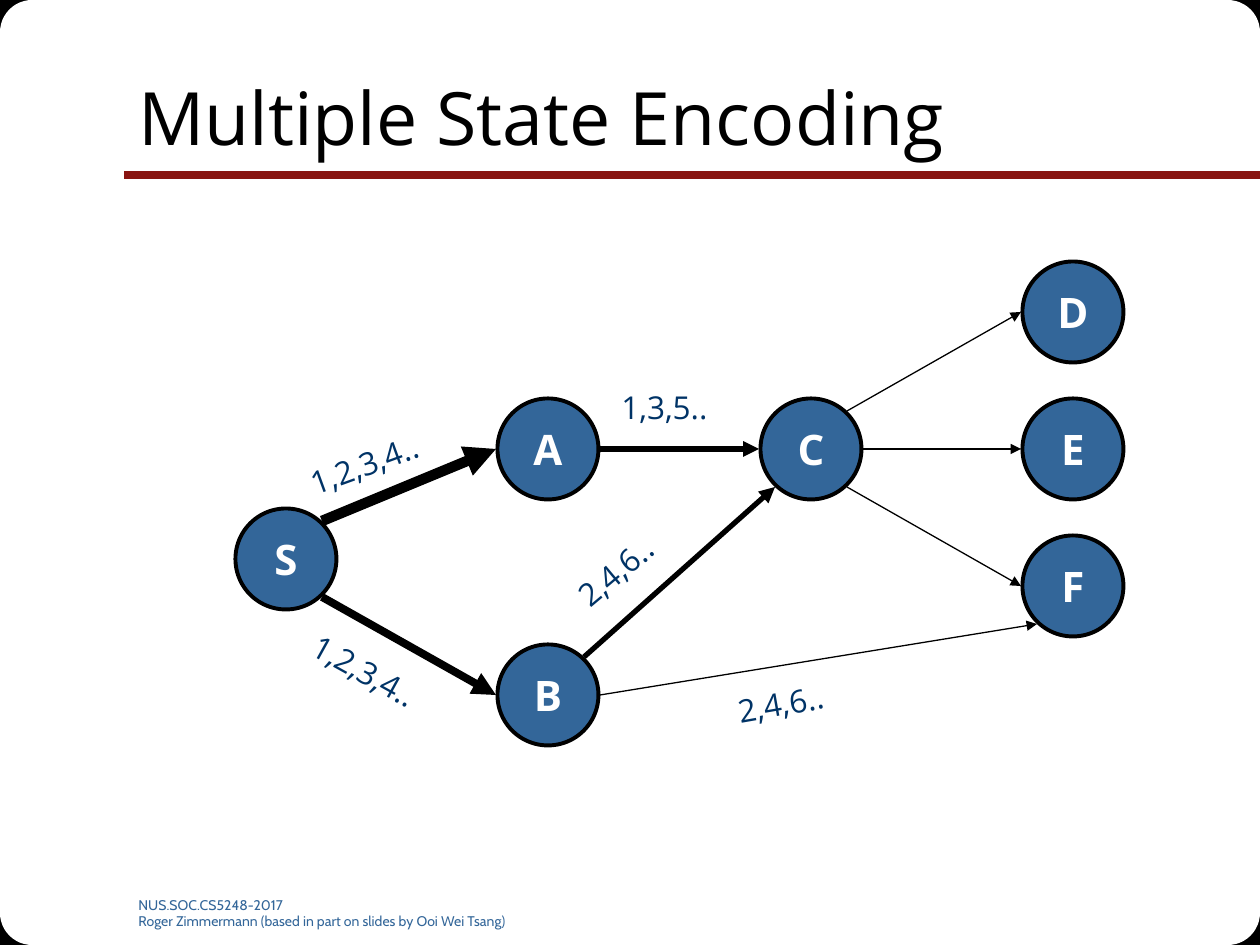
from itertools import product
from typing import NamedTuple

from lxml.etree import SubElement
from pptx import Presentation
from pptx.dml.color import RGBColor
from pptx.enum.shapes import MSO_CONNECTOR as Connector, MSO_SHAPE as Preset
from pptx.enum.text import MSO_ANCHOR as Anchor, PP_ALIGN as Align
from pptx.oxml.ns import qn
from pptx.util import Pt

EMU_PER_PX = 914400 / 126
WIDTH, HEIGHT = 1260, 945
NODE_SIZE = 101
COLORS = {
    "black": "000000",
    "white": "FFFFFF",
    "rule": "891411",
    "blue": "336699",
    "label": "003366",
}
PORTS = {
    "left": (-52, 0),
    "right": (52, 0),
    "upper_right": (36, -38),
    "lower_right": (36, 38),
    "lower_left": (-36, 38),
}


class Node(NamedTuple):
    name: str
    x: int
    y: int


class Edge(NamedTuple):
    source: str
    source_port: str
    target: str
    target_port: str
    weight: float


class Label(NamedTuple):
    text: str
    left: int
    top: int
    width: int
    height: int
    rotation: int = 0
    size: int = 18
    color: str = "label"
    font: str = "Open Sans"


NODES = [
    Node("S", 286, 559),
    Node("C", 811, 449),
    Node("B", 548, 695),
    Node("A", 548, 449),
    Node("D", 1073, 312),
    Node("E", 1073, 449),
    Node("F", 1073, 586),
]
EDGES = [
    Edge("S", "upper_right", "A", "left", 6),
    Edge("S", "lower_right", "B", "left", 4.5),
    Edge("A", "right", "C", "left", 3),
    Edge("C", "upper_right", "D", "left", 0.75),
    Edge("C", "right", "E", "left", 0.75),
    Edge("C", "lower_right", "F", "left", 0.75),
    Edge("B", "upper_right", "C", "lower_left", 3),
    Edge("B", "right", "F", "lower_left", 0.75),
]
FOOTER = Label(
    "NUS.SOC.CS5248-2017\nRoger Zimmermann (based in part on slides by Ooi Wei Tsang)",
    126, 890, 431, 35, size=8, color="blue", font="Cabin",
)
TITLE = Label("Multiple State Encoding", 126, 38, 1071, 157, size=42, color="black")
EDGE_LABELS = [
    Label("1,2,3,4..", 295, 436, 155, 50, -20),
    Label("1,2,3,4..", 295, 650, 155, 50, 29),
    Label("1,3,5..", 609, 382, 125, 50),
    Label("2,4,6..", 558, 542, 125, 50, -40),
    Label("2,4,6..", 725, 677, 125, 50, -10),
]


def px(length: float) -> int:
    return round(length * EMU_PER_PX)


def color(name: str) -> RGBColor:
    return RGBColor.from_string(COLORS[name])


def style_text(text_frame, size: int, color_name: str, font: str, bold: bool = False) -> None:
    for paragraph in text_frame.paragraphs:
        for run in paragraph.runs:
            run.font.size = Pt(size)
            run.font.name = font
            run.font.bold = bold
            run.font.color.rgb = color(color_name)


def add_filled(slide, preset, box: tuple, fill: str, outline: float = 0):
    shape = slide.shapes.add_shape(preset, *map(px, box))
    shape.shadow.inherit = False
    shape.fill.solid()
    shape.fill.fore_color.rgb = color(fill)
    if outline:
        shape.line.color.rgb = color("black")
        shape.line.width = Pt(outline)
    else:
        shape.line.fill.background()
    return shape


def add_corners(slide, preset, width: int, height: int, fill: str, outline: float = 0) -> None:
    for left, top in product((0, WIDTH - width), (0, HEIGHT - height)):
        add_filled(slide, preset, (left, top, width, height), fill, outline)


def add_line(slide, start: tuple, end: tuple, weight: float, color_name: str = "black",
             arrow: bool = True) -> None:
    line = slide.shapes.add_connector(Connector.STRAIGHT, *map(px, (*start, *end)))
    line.line.color.rgb = color(color_name)
    line.line.width = Pt(weight)
    if arrow:
        SubElement(line.line._get_or_add_ln(), qn("a:tailEnd"), type="triangle")
    SubElement(line._element.spPr, qn("a:effectLst"))


def add_node(slide, node: Node) -> None:
    corner = (node.x - NODE_SIZE / 2, node.y - NODE_SIZE / 2)
    shape = add_filled(slide, Preset.OVAL, (*corner, NODE_SIZE, NODE_SIZE), "blue", 2.25)
    text_frame = shape.text_frame
    text_frame.text = node.name
    text_frame.word_wrap = False
    text_frame.vertical_anchor = Anchor.MIDDLE
    text_frame.paragraphs[0].alignment = Align.CENTER
    style_text(text_frame, 24, "white", "Open Sans", bold=True)


def add_edge(slide, edge: Edge, centers: dict) -> None:
    ends = (edge.source, edge.source_port), (edge.target, edge.target_port)
    start, end = (
        (centers[name].x + PORTS[port][0], centers[name].y + PORTS[port][1])
        for name, port in ends
    )
    add_line(slide, start, end, edge.weight)


def add_label(slide, label: Label, wrap: bool = False, anchor=Anchor.TOP) -> None:
    box = slide.shapes.add_textbox(*map(px, label[1:5]))
    box.rotation = label.rotation
    text_frame = box.text_frame
    text_frame.text = label.text
    text_frame.word_wrap = wrap
    text_frame.vertical_anchor = anchor
    style_text(text_frame, label.size, label.color, label.font)


def main() -> None:
    """Build the multiple state encoding slide."""
    presentation = Presentation()
    presentation.slide_width, presentation.slide_height = px(WIDTH), px(HEIGHT)
    slide = presentation.slides.add_slide(presentation.slide_layouts[6])

    add_corners(slide, Preset.RECTANGLE, 54, 55, "black", 0.75)
    add_corners(slide, Preset.ROUNDED_RECTANGLE, 193, 193, "white")
    add_line(slide, (WIDTH, 175), (124, 175), 4.5, "rule", arrow=False)
    add_label(slide, FOOTER, wrap=True)
    add_label(slide, TITLE, wrap=True, anchor=Anchor.MIDDLE)

    for node in NODES:
        add_node(slide, node)
    centers = {node.name: node for node in NODES}
    for edge in EDGES:
        add_edge(slide, edge, centers)
    for label in EDGE_LABELS:
        add_label(slide, label)
    presentation.save("out.pptx")


if __name__ == "__main__":
    main()
